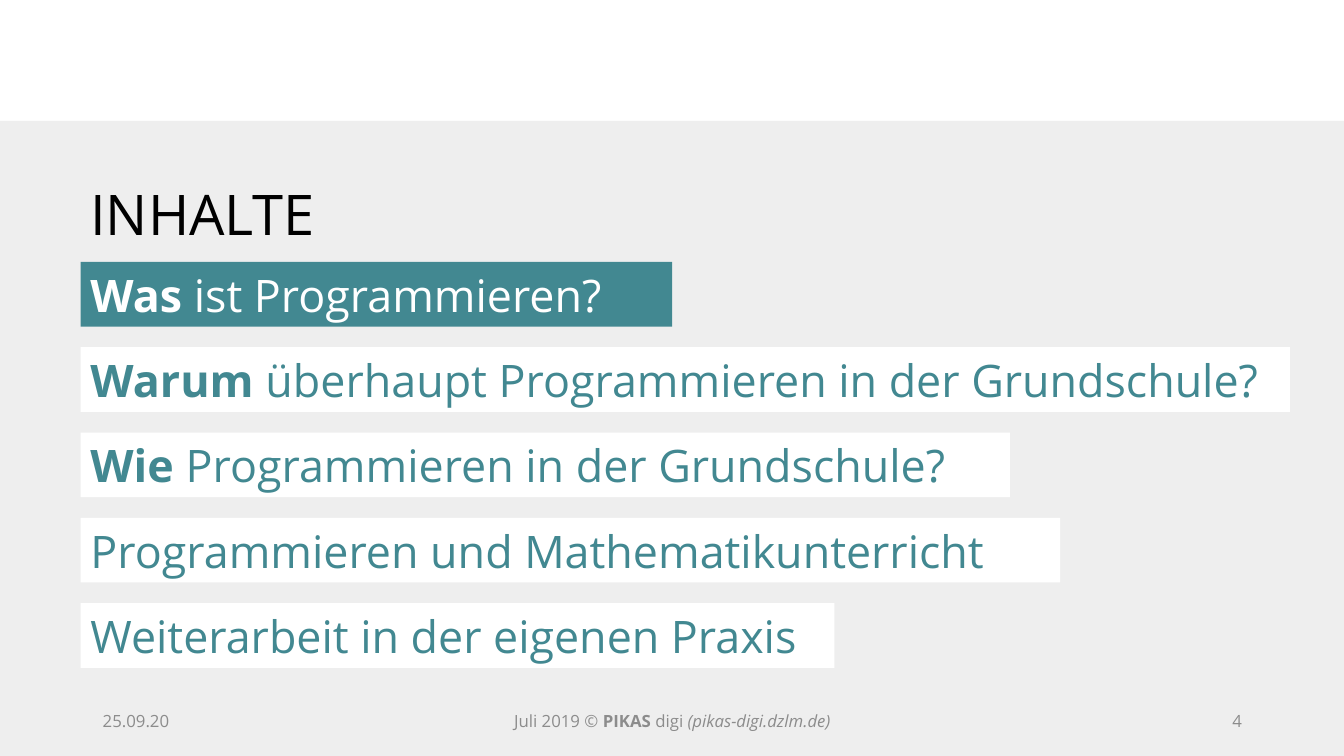
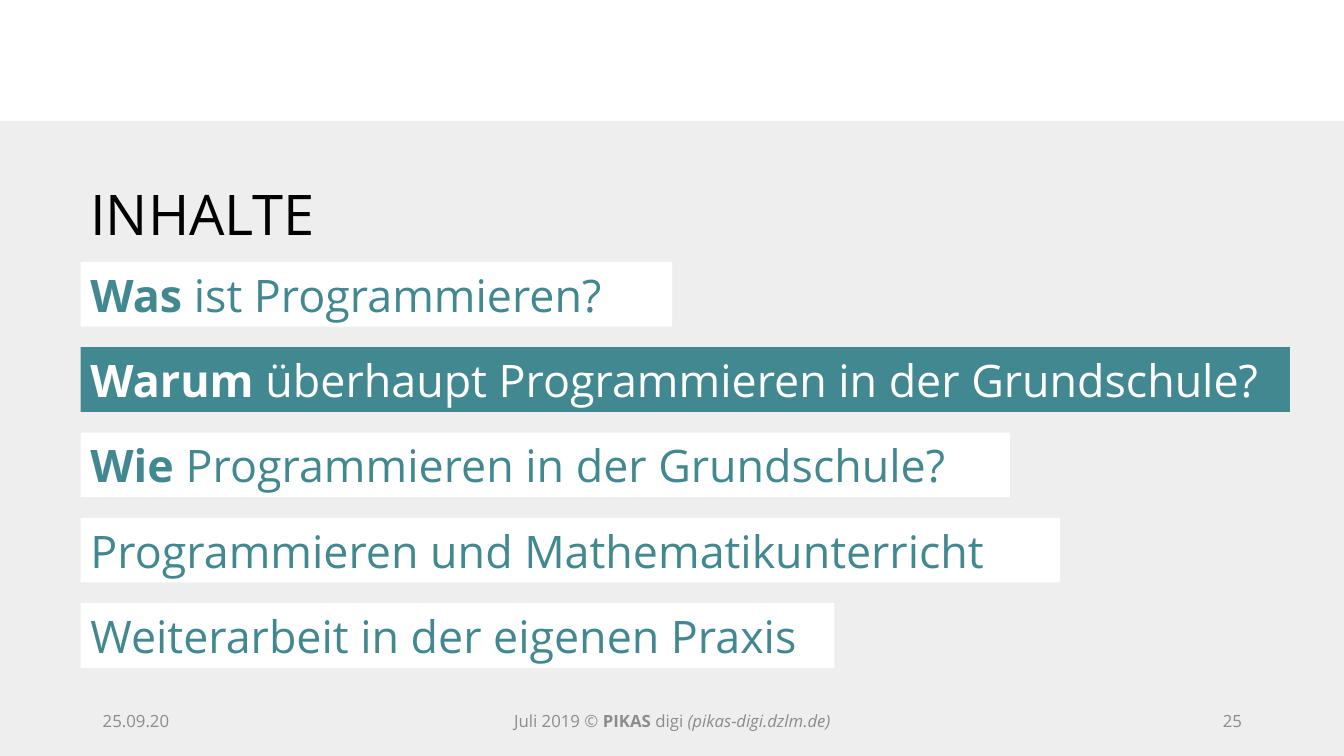
from dataclasses import dataclass
from typing import NamedTuple

from pptx import Presentation
from pptx.dml.color import RGBColor
from pptx.enum.shapes import MSO_SHAPE
from pptx.enum.text import MSO_ANCHOR, PP_ALIGN
from pptx.shapes.autoshape import Shape
from pptx.slide import Slide
from pptx.util import Cm, Pt

COLOURS = {
    "white": "FFFFFF",
    "page": "EEEEEE",
    "accent": "428891",
    "title": "000000",
    "footer": "8C8C8C",
}
FONT = "Open Sans"
PAGE_WIDTH, PAGE_HEIGHT = 33.87, 19.05
BAND_TOP = 3.05
LEFT = 2.03
BAR_TOP, BAR_HEIGHT, BAR_PITCH = 6.6, 1.63, 2.15
FOOTER_TOP, FOOTER_HEIGHT = 17.65, 1.02


class Span(NamedTuple):
    text: str
    bold: bool = False
    italic: bool = False


@dataclass(frozen=True)
class Topic:
    width: float
    spans: list[Span]


@dataclass(frozen=True)
class AgendaPage:
    number: int
    active: int


@dataclass(frozen=True)
class FooterField:
    left: float
    width: float
    align: PP_ALIGN
    spans: list[Span]


TOPICS = [
    Topic(14.91, [Span("Was", bold=True), Span(" ist Programmieren?")]),
    Topic(30.48, [Span("Warum", bold=True),
                  Span(" überhaupt Programmieren in der Grundschule?")]),
    Topic(23.42, [Span("Wie ", bold=True), Span("Programmieren in der Grundschule?")]),
    Topic(24.69, [Span("Programmieren und Mathematikunterricht")]),
    Topic(19, [Span("Weiterarbeit in der eigenen Praxis")]),
]
PAGES = [AgendaPage(number=4, active=0), AgendaPage(number=25, active=1)]


def colour(name: str) -> RGBColor:
    return RGBColor.from_string(COLOURS[name])


def write_text(box: Shape, spans: list[Span], *, size: float, color: str,
               align: PP_ALIGN = PP_ALIGN.LEFT) -> None:
    """Write one vertically centred paragraph made of formatted spans."""
    frame = box.text_frame
    frame.word_wrap = True
    frame.vertical_anchor = MSO_ANCHOR.MIDDLE
    para = frame.paragraphs[0]
    para.alignment = align
    for span in spans:
        run = para.add_run()
        run.text = span.text
        run.font.name = FONT
        run.font.size = Pt(size)
        run.font.bold = span.bold
        run.font.italic = span.italic
        run.font.color.rgb = colour(color)


def add_rectangle(page: Slide, left: float, top: float, width: float,
                  height: float, fill: str) -> Shape:
    box = page.shapes.add_shape(MSO_SHAPE.RECTANGLE, Cm(left), Cm(top),
                                Cm(width), Cm(height))
    box.shadow.inherit = False
    box.fill.solid()
    box.fill.fore_color.rgb = colour(fill)
    box.line.fill.background()
    return box


def add_title(page: Slide, text: str) -> None:
    box = page.shapes.add_textbox(Cm(LEFT), Cm(4.39), Cm(11.3), Cm(1.96))
    write_text(box, [Span(text)], size=40, color="title")


def add_topics(page: Slide, active: int) -> None:
    """Stack the topic bars, with the active one in inverted colours."""
    for index, topic in enumerate(TOPICS):
        fill, color = ("accent", "white") if index == active else ("white", "accent")
        bar = add_rectangle(page, LEFT, BAR_TOP + index * BAR_PITCH,
                            topic.width, BAR_HEIGHT, fill)
        write_text(bar, topic.spans, size=32, color=color)


def add_footer(page: Slide, number: int) -> None:
    fields = [
        FooterField(2.34, 7.62, PP_ALIGN.LEFT, [Span("25.09.20")]),
        FooterField(11.23, 11.43, PP_ALIGN.CENTER, [
            Span("Juli 2019 © "), Span("PIKAS", bold=True), Span(" digi "),
            Span("(pikas-digi.dzlm.de)", italic=True),
        ]),
        FooterField(23.93, 7.62, PP_ALIGN.RIGHT, [Span(str(number))]),
    ]
    for field in fields:
        box = page.shapes.add_textbox(Cm(field.left), Cm(FOOTER_TOP),
                                      Cm(field.width), Cm(FOOTER_HEIGHT))
        write_text(box, field.spans, size=12, color="footer", align=field.align)


def main() -> None:
    deck = Presentation()
    deck.slide_width, deck.slide_height = Cm(PAGE_WIDTH), Cm(PAGE_HEIGHT)
    blank = deck.slide_layouts[6]
    for agenda in PAGES:
        page = deck.slides.add_slide(blank)
        add_rectangle(page, 0, BAND_TOP, PAGE_WIDTH, PAGE_HEIGHT - BAND_TOP, "page")
        add_title(page, "INHALTE")
        add_topics(page, agenda.active)
        add_footer(page, agenda.number)
    deck.save("out.pptx")


if __name__ == "__main__":
    main()
